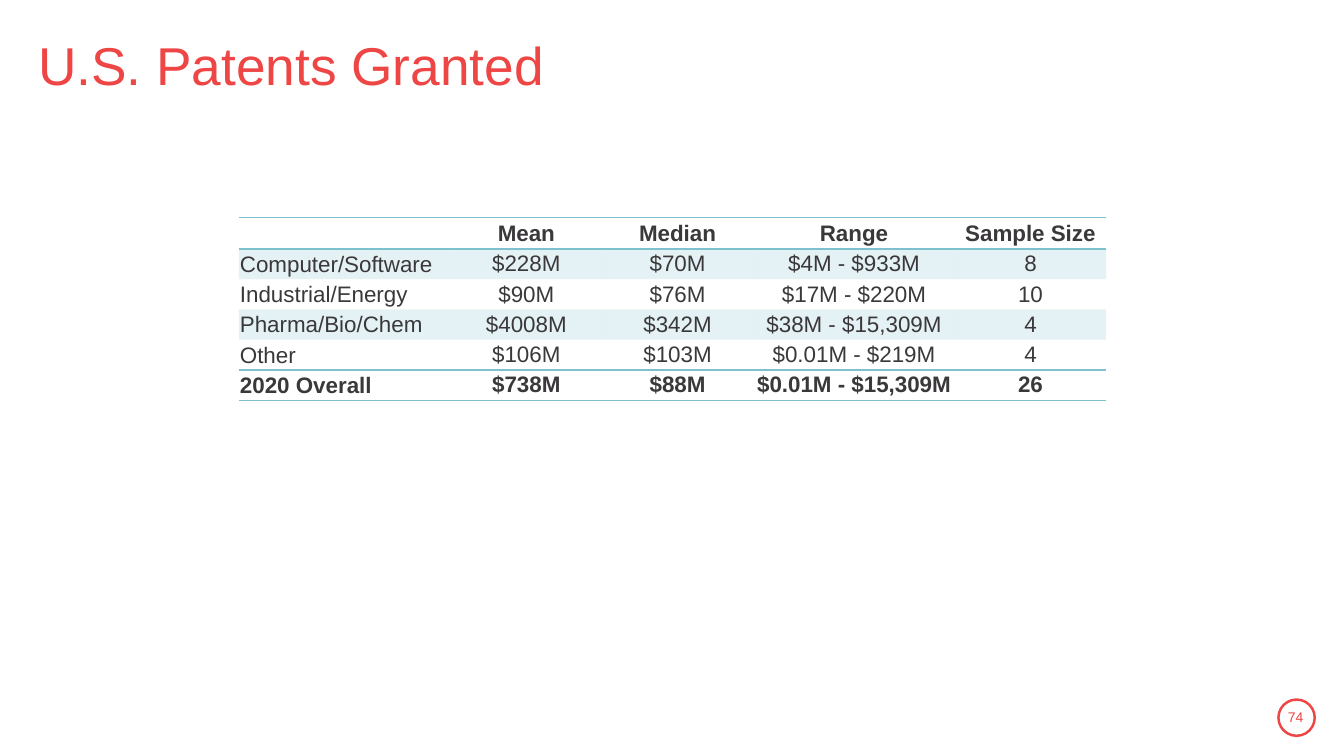
from dataclasses import dataclass

from lxml import etree
from pptx import Presentation
from pptx import util as u
from pptx.dml.color import RGBColor
from pptx.enum import shapes, text
from pptx.oxml import ns

RED, TEAL, DARK = "EE4545", "7FC0CF", "3A383A"
NO_TABLE_STYLE = "{2D5ABB26-0587-4C30-8999-92F81FD0307C}"
COLUMN_WIDTHS = (2.1, 1.5, 1.5, 2, 1.5)
ROW_HEIGHT = 0.3


@dataclass
class Label:
    wording: str
    left: float
    top: float
    width: float
    height: float
    size: float
    align: text.PP_ALIGN
    line_spacing: float = 1.0


@dataclass
class Row:
    values: tuple[str, ...]
    bold: bool = False
    shaded: bool = False
    ruled: bool = False


LABELS = (
    Label("U.S. Patents Granted", 0.28, 0.24, 12.82, 0.87, 38, text.PP_ALIGN.LEFT, 0.9),
    Label("74", 12.62, 6.91, 0.46, 0.4, 10, text.PP_ALIGN.CENTER),
)
ROWS = (
    Row(("", "Mean", "Median", "Range", "Sample Size"), bold=True, ruled=True),
    Row(("Computer/Software", "$228M", "$70M", "$4M - $933M", "8"), shaded=True),
    Row(("Industrial/Energy", "$90M", "$76M", "$17M - $220M", "10")),
    Row(("Pharma/Bio/Chem", "$4008M", "$342M", "$38M - $15,309M", "4"), shaded=True),
    Row(("Other", "$106M", "$103M", "$0.01M - $219M", "4")),
    Row(("2020 Overall", "$738M", "$88M", "$0.01M - $15,309M", "26"), bold=True, ruled=True),
)


def rgb(code: str) -> RGBColor:
    return RGBColor.from_string(code)


def format_runs(para, size: float, color: str, bold: bool = False) -> None:
    for span in para.runs:
        span.font.name = "Arial"
        span.font.size = u.Pt(size)
        span.font.bold = bold
        span.font.color.rgb = rgb(color)


def add_label(page, label: Label) -> None:
    box = page.shapes.add_textbox(
        u.Inches(label.left), u.Inches(label.top), u.Inches(label.width), u.Inches(label.height))
    frame = box.text_frame
    frame.word_wrap = True
    frame.vertical_anchor = text.MSO_ANCHOR.MIDDLE
    frame.text = label.wording
    para = frame.paragraphs[0]
    para.alignment = label.align
    para.line_spacing = label.line_spacing
    format_runs(para, label.size, RED)


def add_number_ring(page) -> None:
    ring = page.shapes.add_shape(
        shapes.MSO_SHAPE.OVAL, u.Inches(12.68), u.Inches(6.94), u.Inches(0.36), u.Inches(0.36))
    ring.shadow.inherit = False
    ring.fill.background()
    ring.line.color.rgb = rgb(RED)
    ring.line.width = u.Pt(1.75)


def rule_cell(cell) -> None:
    """Draw a line along the top and the bottom of the cell."""
    properties = cell._tc.get_or_add_tcPr()
    for index, side in enumerate(("a:lnT", "a:lnB")):
        line = etree.Element(ns.qn(side), w=str(u.Pt(1)))
        fill = etree.SubElement(line, ns.qn("a:solidFill"))
        etree.SubElement(fill, ns.qn("a:srgbClr"), val=TEAL)
        properties.insert(index, line)


def shade_cell(cell) -> None:
    """Fill the cell with teal at 20 % opacity."""
    cell.fill.solid()
    cell.fill.fore_color.rgb = rgb(TEAL)
    color = cell._tc.tcPr.find(".//" + ns.qn("a:srgbClr"))
    etree.SubElement(color, ns.qn("a:alpha"), val="20000")


def fill_cell(cell, value: str, row: Row, is_name: bool) -> None:
    inset = u.Inches(0.01 if is_name else 0)
    cell.margin_left = cell.margin_right = cell.margin_top = inset
    cell.margin_bottom = 0
    cell.vertical_anchor = text.MSO_ANCHOR.MIDDLE
    para = cell.text_frame.paragraphs[0]
    para.text = value
    para.alignment = text.PP_ALIGN.LEFT if is_name else text.PP_ALIGN.CENTER
    format_runs(para, 16, DARK, row.bold)
    if row.shaded:
        shade_cell(cell)
    else:
        cell.fill.background()
    if row.ruled:
        rule_cell(cell)


def add_patent_table(page) -> None:
    frame = page.shapes.add_table(
        len(ROWS), len(COLUMN_WIDTHS), u.Inches(2.37), u.Inches(2.16),
        u.Inches(sum(COLUMN_WIDTHS)), u.Inches(ROW_HEIGHT * len(ROWS)))
    table = frame.table
    table.first_row = table.horz_banding = False
    table._tbl.tblPr.find(ns.qn("a:tableStyleId")).text = NO_TABLE_STYLE
    for column, width in zip(table.columns, COLUMN_WIDTHS):
        column.width = u.Inches(width)
    for r, row in enumerate(ROWS):
        table.rows[r].height = u.Inches(ROW_HEIGHT)
        for c, value in enumerate(row.values):
            fill_cell(table.cell(r, c), value, row, is_name=c == 0)


def main() -> None:
    deck = Presentation()
    deck.slide_width, deck.slide_height = u.Inches(13.33), u.Inches(7.5)
    page = deck.slides.add_slide(deck.slide_layouts[6])
    add_number_ring(page)
    for label in LABELS:
        add_label(page, label)
    add_patent_table(page)
    deck.save("out.pptx")


if __name__ == "__main__":
    main()
